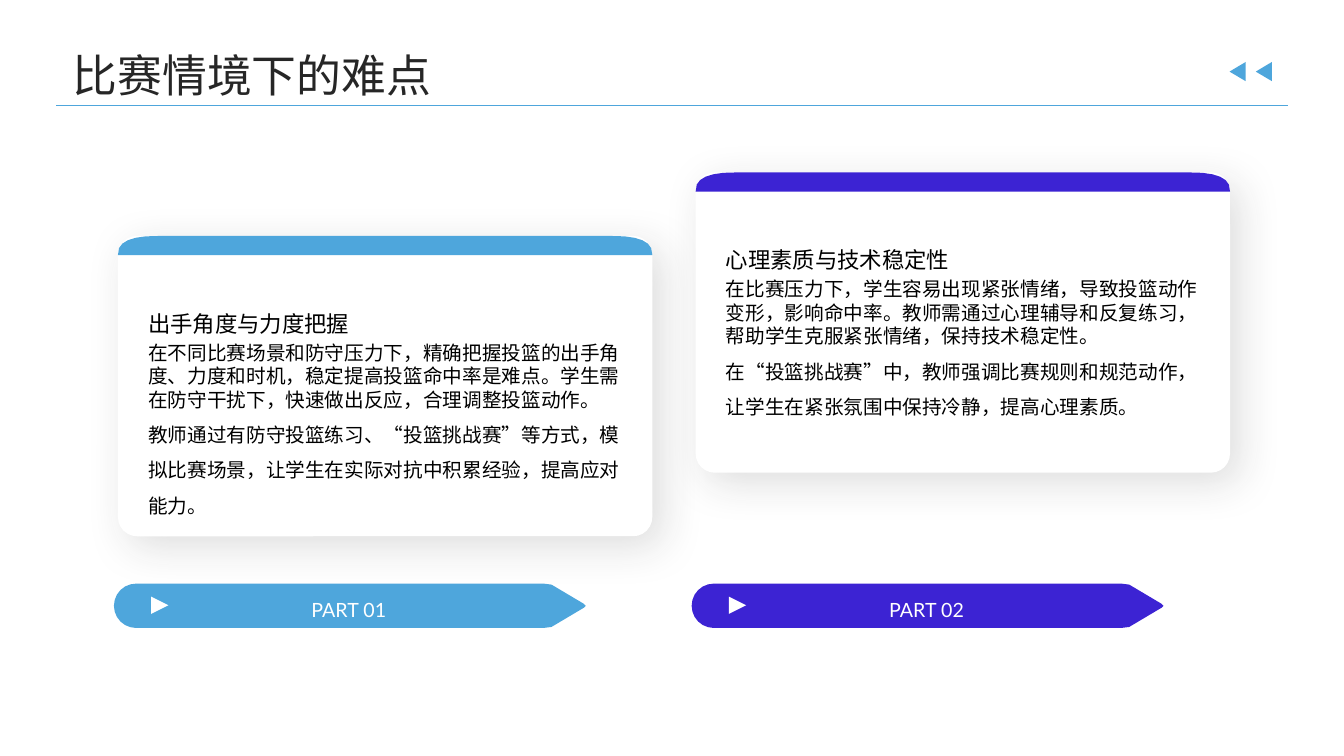
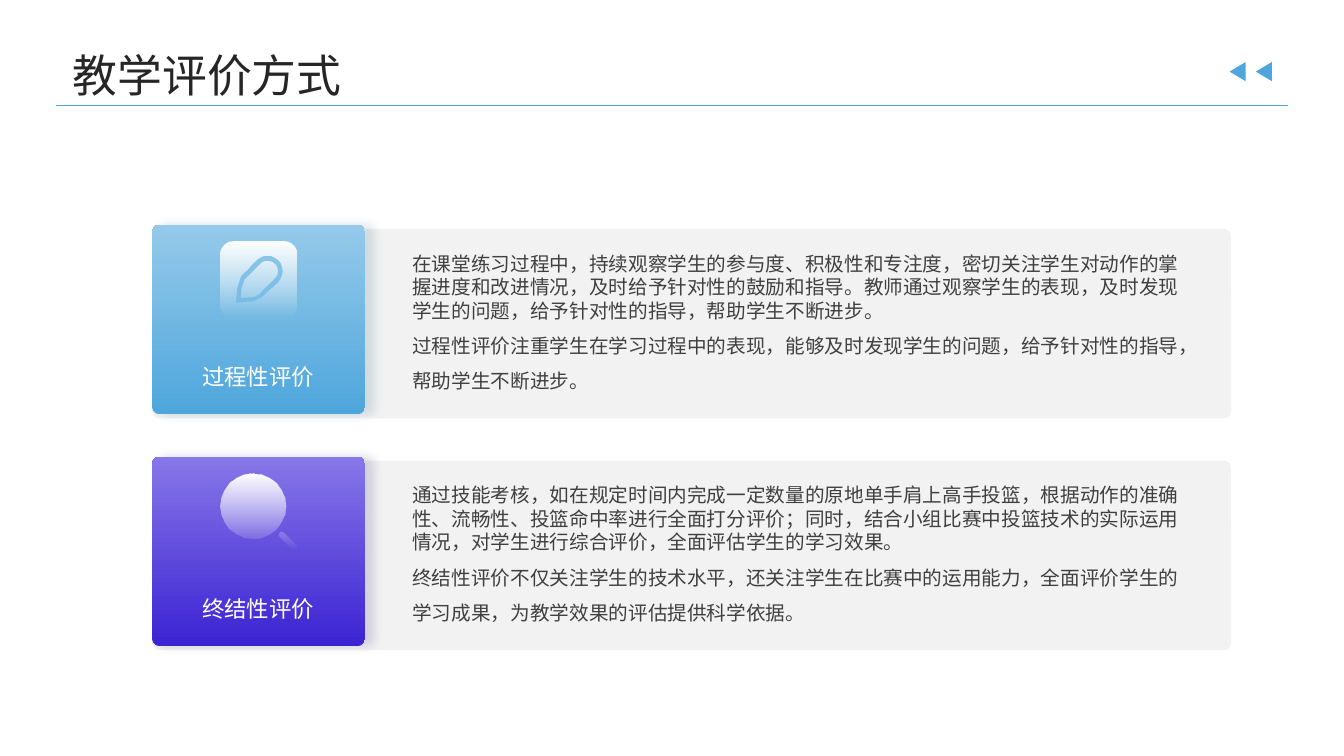
"""Build two slides on shooting lessons: match difficulties and ways of assessment."""
from math import cos, radians, sin

from lxml.etree import SubElement
from pptx import Presentation
from pptx.dml.color import RGBColor
from pptx.enum.shapes import MSO_CONNECTOR, MSO_SHAPE as SHAPE
from pptx.enum.text import MSO_ANCHOR as ANCHOR, MSO_AUTO_SIZE, PP_ALIGN as ALIGN
from pptx.oxml.ns import qn
from pptx.util import Inches, Pt

COLORS = {
    "blue": "4EA6DC", "light_blue": "95CAEA", "deep_blue": "19567C",
    "violet": "3C23D3", "light_violet": "8777E8", "deep_violet": "1E1269",
    "white": "FFFFFF", "panel": "F2F2F2", "title": "262626",
    "text": "404040", "black": "000000",
}
CJK, LATIN = "Noto Sans CJK SC", "Lato"
TURN = [(cos(radians(a)), sin(radians(a))) for a in range(0, 511, 15)]


def paint(shape, *colors, fade=False, shadow=None):
    """Fill a shape plainly or with a rising gradient, with an optional soft shadow."""
    shape.shadow.inherit = False
    shape.line.fill.background()
    if len(colors) == 1:
        shape.fill.solid()
        shape.fill.fore_color.rgb = RGBColor.from_string(COLORS[colors[0]])
    else:
        shape.fill.gradient()
        shape.fill.gradient_angle = 90
        for stop, color in zip(shape.fill.gradient_stops, colors):
            stop.color.rgb = RGBColor.from_string(COLORS[color])
    properties = shape._element.spPr
    if fade:
        first_color = properties.find(".//" + qn("a:srgbClr"))
        SubElement(first_color, qn("a:alpha"), val="0")
    if shadow:
        color, opacity, blur, distance, angle = shadow
        outer = SubElement(properties.find(qn("a:effectLst")), qn("a:outerShdw"),
                           blurRad=str(Pt(blur)), dist=str(Pt(distance)),
                           dir=str(angle * 60000), algn="tl", rotWithShape="0")
        tint = SubElement(outer, qn("a:srgbClr"), val=COLORS[color])
        SubElement(tint, qn("a:alpha"), val=str(opacity * 1000))


def write(box, lines, size, color, spacings, font=CJK, align=ALIGN.LEFT, anchor=ANCHOR.TOP):
    """Write one paragraph per line, each with its own line spacing."""
    frame = box.text_frame
    frame.word_wrap = True
    frame.auto_size = MSO_AUTO_SIZE.NONE
    frame.vertical_anchor = anchor
    frame.margin_left = frame.margin_right = frame.margin_top = frame.margin_bottom = 0
    for number, (line, spacing) in enumerate(zip(lines, spacings)):
        paragraph = frame.add_paragraph() if number else frame.paragraphs[0]
        paragraph.alignment = align
        paragraph.line_spacing = spacing
        paragraph.space_before = paragraph.space_after = Pt(0)
        run = paragraph.add_run()
        run.text = line
        run.font.size = Pt(size)
        run.font.name = font
        run.font.color.rgb = RGBColor.from_string(COLORS[color])
        SubElement(run._r.rPr, qn("a:ea"), typeface=font)


BODY_SPACING = (Pt(16.8), Pt(25.2))
LABEL_SPACING = (Pt(25),)

deck = Presentation()
deck.slide_width, deck.slide_height = Inches(13.33), Inches(7.5)

slides = []
for heading in ("比赛情境下的难点", "教学评价方式"):
    slide = deck.slides.add_slide(deck.slide_layouts[5])
    slides.append(slide)
    title = slide.shapes.title
    title.left, title.top = Inches(0.72), Inches(0.46)
    title.width, title.height = Inches(11.88), Inches(0.51)
    write(title, [heading], 32, "title", (1.1,), anchor=ANCHOR.MIDDLE)
    rule = slide.shapes.add_connector(MSO_CONNECTOR.STRAIGHT, Inches(0.56), Inches(1.05),
                                      Inches(12.77), Inches(1.05))
    rule.line.color.rgb = RGBColor.from_string(COLORS["blue"])
    rule.line.width = Pt(0.75)
    SubElement(rule._element.spPr, qn("a:effectLst"))
    for left in (12.18, 12.44):
        marker = slide.shapes.add_shape(SHAPE.ISOSCELES_TRIANGLE, Inches(left), Inches(0.63),
                                        Inches(0.19), Inches(0.16))
        marker.rotation = 270
        paint(marker, "blue")

difficulties, assessment = slides

cards = [
    ("blue", 2.34, "PART 01", "出手角度与力度把握", [
        "在不同比赛场景和防守压力下，精确把握投篮的出手角度、力度和时机，稳定提高投篮命中率是难点。"
        "学生需在防守干扰下，快速做出反应，合理调整投篮动作。",
        "教师通过有防守投篮练习、“投篮挑战赛”等方式，模拟比赛场景，让学生在实际对抗中积累经验，"
        "提高应对能力。"]),
    ("violet", 1.71, "PART 02", "心理素质与技术稳定性", [
        "在比赛压力下，学生容易出现紧张情绪，导致投篮动作变形，影响命中率。"
        "教师需通过心理辅导和反复练习，帮助学生克服紧张情绪，保持技术稳定性。",
        "在“投篮挑战赛”中，教师强调比赛规则和规范动作，让学生在紧张氛围中保持冷静，提高心理素质。"]),
]
shapes = difficulties.shapes
for column, (color, top, part, heading, body) in enumerate(cards):
    left = 1.17 + 5.73 * column
    card = shapes.add_shape(SHAPE.ROUNDED_RECTANGLE, Inches(left), Inches(top),
                            Inches(5.3), Inches(2.98))
    card.adjustments[0] = 0.064
    paint(card, "white", shadow=("title", 15, 30, 10, 45))

    corner = [(0.43 * abs(c) ** 0.75, 0.19 * abs(s) ** 0.75) for c, s in TURN[12:19]]
    band = [(left + 0.43 - x, top + 0.19 - y) for x, y in corner]
    band += [(left + 4.87 + x, top + 0.19 - y) for x, y in reversed(corner)]
    start, middle = left - 0.04, 6.01
    banner = [(start + 0.22 + 0.22 * c, middle + 0.22 * s) for c, s in TURN[6:19]]
    banner += [(start + x, middle + y) for x, y in (
        (4.26, -0.22), (4.34, -0.21), (4.66, -0.02), (4.68, 0),
        (4.66, 0.02), (4.34, 0.21), (4.26, 0.22))]
    for outline in (band, banner):
        points = [(Inches(x), Inches(y)) for x, y in outline]
        builder = shapes.build_freeform(*points[0])
        builder.add_line_segments(points[1:], close=True)
        paint(builder.convert_to_shape(), color)

    play = shapes.add_shape(SHAPE.ISOSCELES_TRIANGLE, Inches(start + 0.37), Inches(5.92),
                            Inches(0.17), Inches(0.17))
    play.rotation = 90
    paint(play, "white")

    part_label = shapes.add_textbox(Inches(start + 1.06), Inches(5.91), Inches(2.54), Inches(0.26))
    write(part_label, [part], 14, "white", (1.1,), font=LATIN, align=ALIGN.CENTER)
    card_heading = shapes.add_textbox(Inches(left + 0.3), Inches(top + 0.25),
                                      Inches(4.71), Inches(0.75))
    write(card_heading, [heading], 16, "black", LABEL_SPACING, anchor=ANCHOR.BOTTOM)
    card_body = shapes.add_textbox(Inches(left + 0.3), Inches(top + 1.04),
                                   Inches(4.71), Inches(1.79))
    write(card_body, body, 14, "black", BODY_SPACING)

square = [(x + 0.12 * c, y + 0.12 * s)
          for x, y, first in ((0.63, 0.63, 0), (0.12, 0.63, 6), (0.12, 0.12, 12), (0.63, 0.12, 18))
          for c, s in TURN[first:first + 7]]
pencil = [(0.15, 0.6), (0.16, 0.46), (0.2, 0.34)]
pencil += [(0.46 + 0.15 * c, 0.29 + 0.15 * s) for c, s in TURN[15:28]]
pencil += [(0.41, 0.54), (0.33, 0.58)]
pencil_hole = [(0.2, 0.55), (0.21, 0.45), (0.24, 0.37)]
pencil_hole += [(0.46 + 0.1 * c, 0.29 + 0.1 * s) for c, s in TURN[15:28]]
pencil_hole += [(0.38, 0.51), (0.33, 0.54)]
lens = [(0.32 + 0.32 * c, 0.32 + 0.32 * s) for c, s in TURN[:24]]
handle = [(x + 0.03 * c, x + 0.03 * s)
          for x, first in ((0.6, 9), (0.72, 21)) for c, s in TURN[first:first + 13]]

methods = [
    ("blue", "过程性评价", [square, pencil, pencil_hole], [
        "在课堂练习过程中，持续观察学生的参与度、积极性和专注度，密切关注学生对动作的掌握进度和改进情况，"
        "及时给予针对性的鼓励和指导。教师通过观察学生的表现，及时发现学生的问题，给予针对性的指导，"
        "帮助学生不断进步。",
        "过程性评价注重学生在学习过程中的表现，能够及时发现学生的问题，给予针对性的指导，"
        "帮助学生不断进步。"]),
    ("violet", "终结性评价", [lens, handle], [
        "通过技能考核，如在规定时间内完成一定数量的原地单手肩上高手投篮，根据动作的准确性、流畅性、"
        "投篮命中率进行全面打分评价；同时，结合小组比赛中投篮技术的实际运用情况，对学生进行综合评价，"
        "全面评估学生的学习效果。",
        "终结性评价不仅关注学生的技术水平，还关注学生在比赛中的运用能力，全面评价学生的学习成果，"
        "为教学效果的评估提供科学依据。"]),
]
shapes = assessment.shapes
for row, (color, name, icon, body) in enumerate(methods):
    top = 2.23 + 2.3 * row
    panel = shapes.add_shape(SHAPE.ROUNDED_RECTANGLE, Inches(1.51), Inches(top + 0.04),
                             Inches(10.7), Inches(1.88))
    tile = shapes.add_shape(SHAPE.ROUNDED_RECTANGLE, Inches(1.51), Inches(top),
                            Inches(2.11), Inches(1.88))
    panel.adjustments[0] = tile.adjustments[0] = 0.038
    paint(panel, "panel")
    paint(tile, color, "light_" + color, shadow=("deep_" + color, 14, 7, 6, 0))

    contours = [[(Inches(2.19 + x), Inches(top + 0.17 + y)) for x, y in contour]
                for contour in icon]
    builder = shapes.build_freeform(*contours[0][0])
    for contour in contours:
        builder.move_to(*contour[0])
        builder.add_line_segments(contour[1:], close=True)
    paint(builder.convert_to_shape(), "white", "white", fade=True)

    method_name = shapes.add_textbox(Inches(1.62), Inches(top + 1.04), Inches(1.88), Inches(0.85))
    write(method_name, [name], 16, "white", LABEL_SPACING,
          align=ALIGN.CENTER, anchor=ANCHOR.MIDDLE)
    method_body = shapes.add_textbox(Inches(4.09), Inches(top + 0.03), Inches(7.64), Inches(1.87))
    write(method_body, body, 14, "text", BODY_SPACING, anchor=ANCHOR.MIDDLE)

deck.save("out.pptx")
